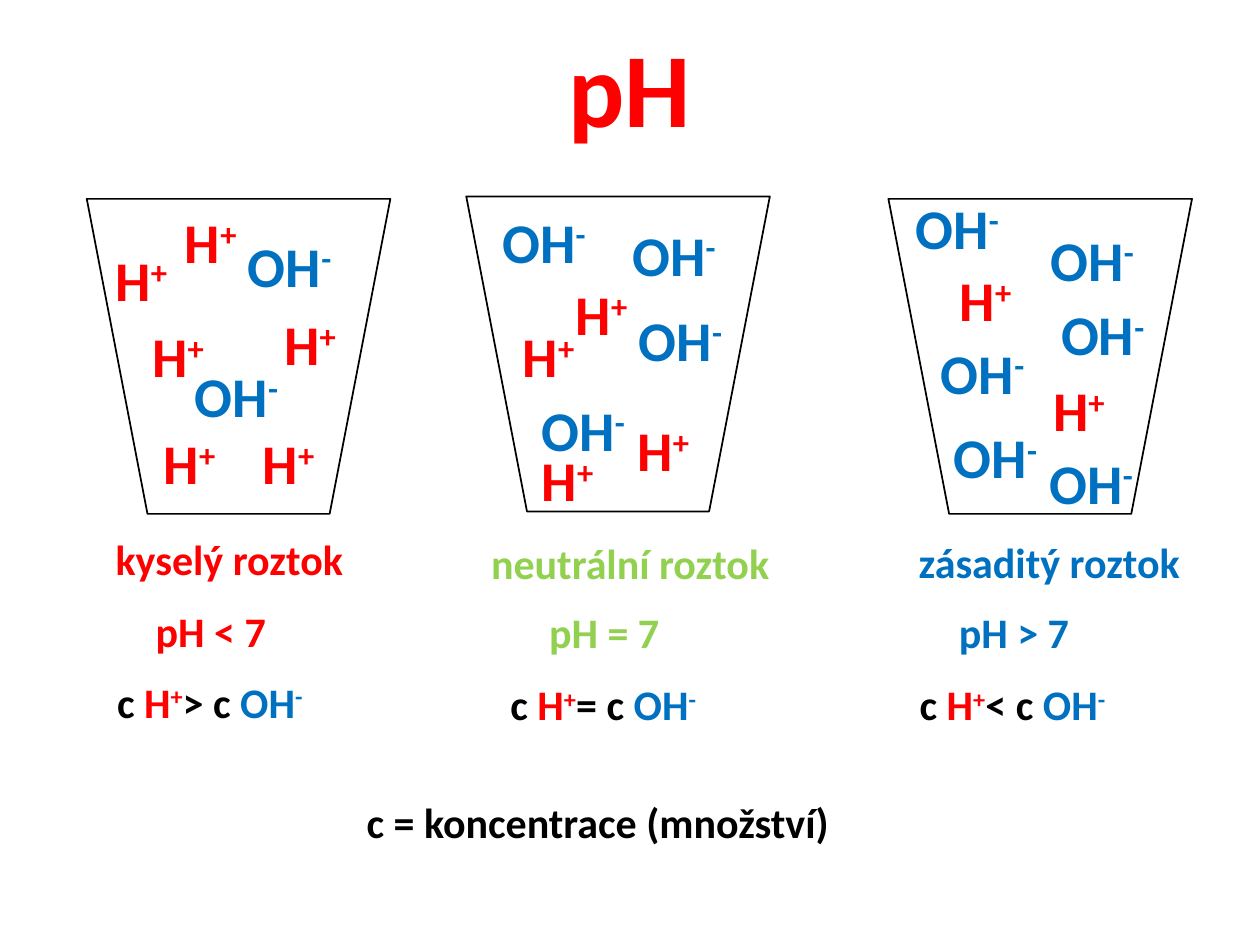
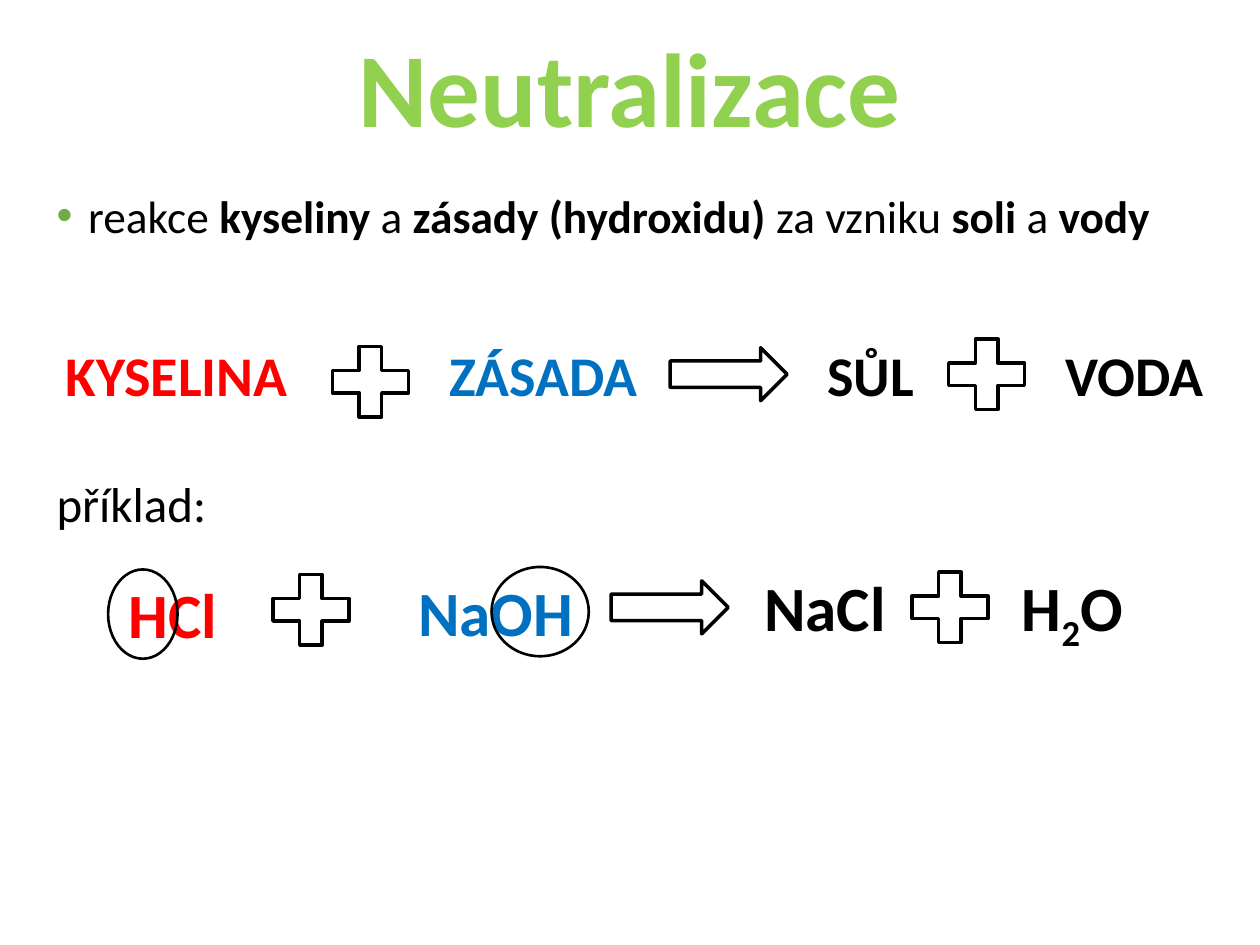
import dataclasses

import lxml.etree
import pptx
import pptx.dml.color
import pptx.enum.shapes
import pptx.enum.text
import pptx.oxml.ns
import pptx.util

Cm = pptx.util.Cm
Form = pptx.enum.shapes.MSO_SHAPE
Text = pptx.enum.text


@dataclasses.dataclass(frozen=True)
class Theme:
    """Colours, font and type sizes of the deck."""
    font: str = "Calibri"
    red: str = "FF0000"
    blue: str = "0070C0"
    green: str = "92D050"
    black: str = "000000"
    bullet: str = "70AD47"
    title: float = 60
    formula: float = 36
    ion: float = 32
    example: float = 28
    body: float = 25.9
    label: float = 24


THEME = Theme()
UP, DOWN = 30, -25
PROTON = [("H", THEME.red), ("+", THEME.red, True, UP)]
HYDROXIDE = [("OH", THEME.blue), ("-", THEME.blue, True, UP)]

BEAKERS = [
    dict(left=1.75, top=4.01, name="kyselý roztok", sign=">", color=THEME.red,
         protons=[(0.33, 0.81), (3.3, 4.5), (3.73, 2.11), (1.3, 4.5),
                  (1.07, 2.34), (1.73, 0.05)],
         hydroxides=[(1.93, 3.15), (3, 0.53)],
         ph="pH < 7", spots=[(0.33, 6.63, 5.13), (1.14, 8.08, 2.74), (0.36, 9.5, 4.34)]),
    dict(left=9.4, top=3.96, name="neutrální roztok", sign="=", color=THEME.green,
         protons=[(0.89, 2.39), (3.2, 4.29), (1.27, 4.9), (1.96, 1.55)],
         hydroxides=[(0.48, 0.1), (3.23, 2.08), (1.27, 3.89), (3.1, 0.36)],
         ph="pH = 7", spots=[(0.25, 6.76, 6.17), (1.42, 8.15, 2.74), (0.64, 9.6, 4.34)]),
    dict(left=17.91, top=4.01, name="zásaditý roztok", sign="<", color=THEME.blue,
         protons=[(1.19, 1.22), (3.07, 3.43)],
         hydroxides=[(3.02, 0.41), (0.81, 2.69), (3.23, 1.91), (1.07, 4.39),
                     (3, 4.9), (0.3, -0.23)],
         ph="pH > 7", spots=[(0.36, 6.68, 5.84), (1.17, 8.1, 2.74), (0.38, 9.55, 4.34)]),
]


def write(para, parts, size):
    """Fill a paragraph with (text, colour, bold, baseline) parts."""
    for text, color, *rest in parts:
        bold, base = (rest + [True, 0][len(rest):])
        run = para.add_run()
        run.text = text
        font = run.font
        font.name, font.size, font.bold = THEME.font, pptx.util.Pt(size), bold
        font.color.rgb = pptx.dml.color.RGBColor.from_string(color)
        if base:
            run._r.get_or_add_rPr().set("baseline", str(base * 1000))


def label(slide, left, top, width, parts, size):
    """Add a one-line text that hugs its words."""
    height = size * 0.043 + 0.25
    box = slide.shapes.add_textbox(Cm(left), Cm(top), Cm(width), Cm(height))
    box.text_frame.word_wrap = False
    box.text_frame.auto_size = Text.MSO_AUTO_SIZE.SHAPE_TO_FIT_TEXT
    write(box.text_frame.paragraphs[0], parts, size)


def outline(slide, form, left, top, width, height, weight):
    """Add a hollow preset shape with a black line."""
    shape = slide.shapes.add_shape(form, Cm(left), Cm(top), Cm(width), Cm(height))
    shape.shadow.inherit = False
    shape.fill.background()
    shape.line.color.rgb = pptx.dml.color.RGBColor.from_string(THEME.black)
    shape.line.width = pptx.util.Pt(weight)


def title(slide, text, color):
    """Add the large centred title."""
    box = slide.shapes.add_textbox(Cm(1.75), Cm(0.38), Cm(21.9), Cm(3))
    frame = box.text_frame
    frame.word_wrap = True
    frame.vertical_anchor = Text.MSO_ANCHOR.MIDDLE
    para = frame.paragraphs[0]
    para.alignment = Text.PP_ALIGN.CENTER
    para.line_spacing = 0.9
    write(para, [(text, color)], THEME.title)


def beaker(slide, left, top, name, color, sign, ph, protons, hydroxides, spots):
    """Draw a beaker with its ions and three captions below."""
    outline(slide, Form.FLOWCHART_MANUAL_OPERATION, left, top, 6.12, 6.35, 1)
    for ion, width, places in ((PROTON, 1.6, protons), (HYDROXIDE, 2.24, hydroxides)):
        for x, y in places:
            label(slide, left + x, top + y, width, ion, THEME.ion)
    ratio = [("c ", THEME.black), *PROTON, (f"{sign} c ", THEME.black), *HYDROXIDE]
    captions = [(name, color)], [(ph, color)], ratio
    for parts, (x, y, width) in zip(captions, spots):
        label(slide, left + x, top + y, width, parts, THEME.label)


def rule(slide, left, top, width, height):
    """Add the bulleted definition of neutralisation."""
    box = slide.shapes.add_textbox(Cm(left), Cm(top), Cm(width), Cm(height))
    box.text_frame.word_wrap = True
    para = box.text_frame.paragraphs[0]
    words = ["reakce ", "kyseliny", " a ", "zásady (hydroxidu) ",
             "za vzniku ", "soli", " a ", "vody"]
    write(para, [(word, THEME.black, index % 2 == 1)
                 for index, word in enumerate(words)], THEME.body)
    props = para._p.get_or_add_pPr()
    indent = Cm(0.64)
    props.set("marL", str(indent))
    props.set("indent", str(-indent))
    qn = pptx.oxml.ns.qn
    tint = lxml.etree.SubElement(props, qn("a:buClr"))
    lxml.etree.SubElement(tint, qn("a:srgbClr"), val=THEME.bullet)
    lxml.etree.SubElement(props, qn("a:buFont"), typeface="Arial")
    lxml.etree.SubElement(props, qn("a:buChar"), char="•")


def equation(slide, left, top, size, words, pluses, arrow, rings=()):
    """Lay out one reaction: its words, plus signs, arrow and rings."""
    for x, y, width, parts in words:
        label(slide, left + x, top + y, width, parts, size)
    for x, y in pluses:
        outline(slide, Form.MATH_PLUS, left + x, top + y, 2.08, 1.93, 2)
    x, y = arrow
    outline(slide, Form.RIGHT_ARROW, left + x, top + y, 2.36, 1.07, 2)
    for x, y, width in rings:
        outline(slide, Form.OVAL, left + x, top + y, width, 1.8, 1.5)


def acidity(slide):
    """Build the slide that compares the three solutions."""
    title(slide, "pH", THEME.red)
    for data in BEAKERS:
        beaker(slide, **data)
    label(slide, 7.14, 15.93, 9.93,
          [("c = koncentrace (množství)", THEME.black)], THEME.label)


def neutral(slide):
    """Build the slide on neutralisation."""
    title(slide, "Neutralizace", THEME.green)
    rule(slide, 0.89, 3.66, 24.28, 1.65)
    equation(slide, 1.07, 6.73, THEME.ion,
             words=[(0, 0, 5.03, [("KYSELINA", THEME.red)]),
                    (7.74, 0, 4.34, [("ZÁSADA", THEME.blue)]),
                    (15.36, 0, 2.29, [("SŮL", THEME.black)]),
                    (20.16, 0, 3.3, [("VODA", THEME.black)])],
             pluses=[(5.36, 0), (17.78, -0.15)], arrow=(12.44, 0.28))
    label(slide, 0.89, 9.42, 3.56, [("příklad:", THEME.black, False)], THEME.example)
    water = [("H", THEME.black), ("2", THEME.black, True, DOWN), ("O", THEME.black)]
    equation(slide, 2.18, 11.48, THEME.formula,
             words=[(0.16, 0, 2.31, [("HCl", THEME.red)]),
                    (6, -0.05, 3.66, [("NaOH", THEME.blue)]),
                    (12.98, -0.15, 2.97, [("NaCl", THEME.black)]),
                    (18.17, -0.15, 2.62, water)],
             pluses=[(3.05, -0.15), (15.93, -0.2)], arrow=(10.14, 0.23),
             rings=[(0, 0, 1.4), (7.73, -0.05, 1.96)])


def main():
    """Build and save the deck."""
    deck = pptx.Presentation()
    deck.slide_width, deck.slide_height = Cm(25.4), Cm(19.05)
    for build in (acidity, neutral):
        build(deck.slides.add_slide(deck.slide_layouts[6]))
    deck.save("out.pptx")


if __name__ == "__main__":
    main()
